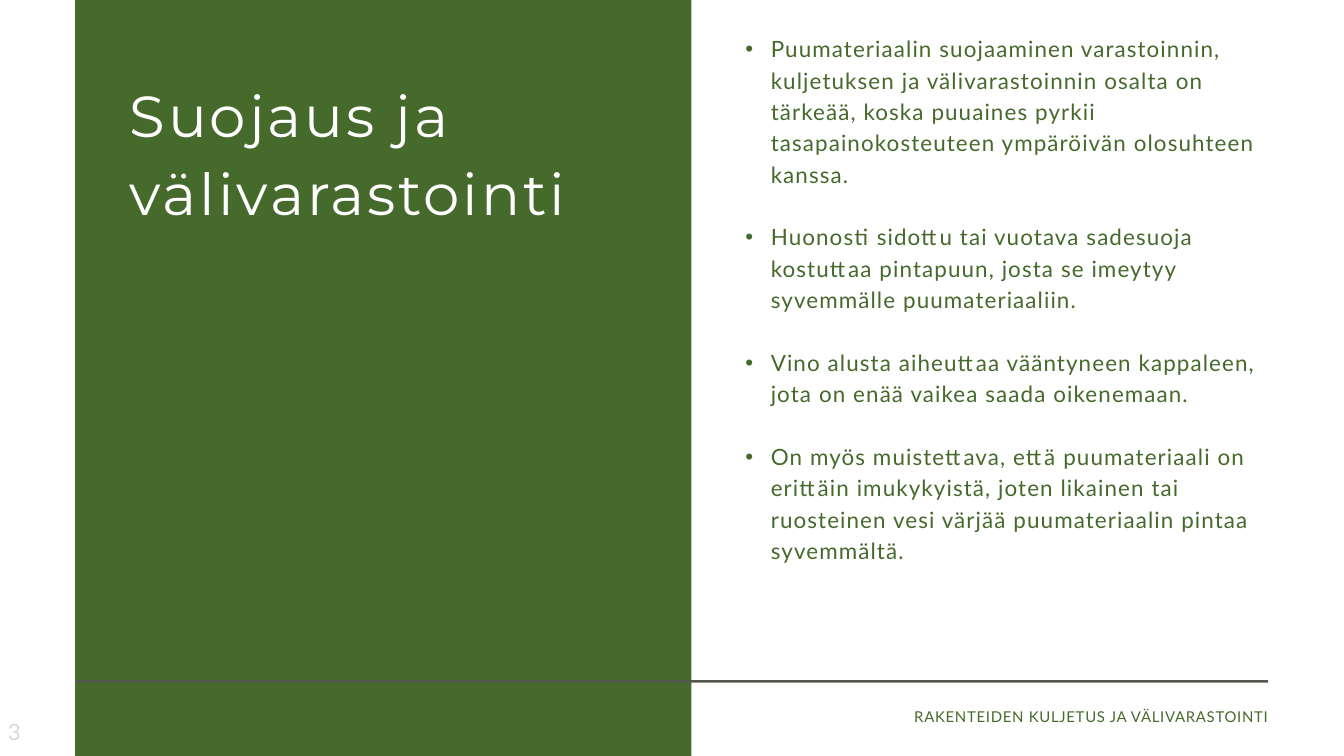
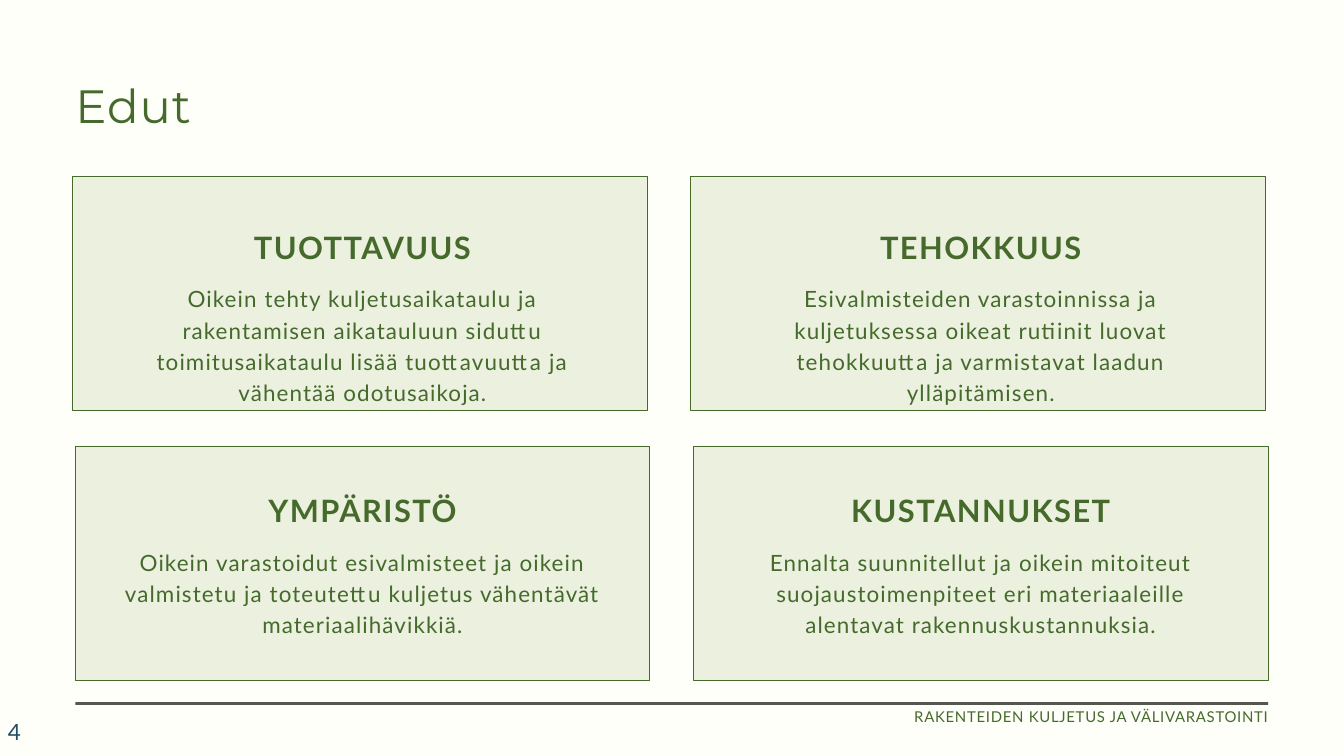
from lxml import etree
from pptx import Presentation, util as u
from pptx.dml.color import RGBColor
from pptx.enum import shapes, text
from pptx.oxml.ns import qn

# The grid has square cells, 20 columns across the slide.
COLUMNS, ROWS = 20, 11.25
CELL = u.Inches(1)
LEFT, WIDTH = 1.12, 17.75

GREEN = RGBColor(0x45, 0x6A, 0x2C)
PALE_GREEN = RGBColor(0xEB, 0xF1, 0xDE)
RULE_GREY = RGBColor(0x52, 0x58, 0x4D)
NUMBER_GREY = RGBColor(0xD9, 0xD9, 0xD9)
NUMBER_BLUE = RGBColor(0x1E, 0x4D, 0x65)
CREAM = RGBColor(0xFE, 0xFF, 0xF8)
WHITE = RGBColor(0xFF, 0xFF, 0xFF)

BODY_FONT, TITLE_FONT = "Lato", "Montserrat"
BODY_SIZE, BODY_LEADING, BODY_TRACKING = 24, 33.6, 1.2
FOOTER = "RAKENTEIDEN KULJETUS JA VÄLIVARASTOINTI"

BULLETS = [
    "Puumateriaalin suojaaminen varastoinnin, kuljetuksen ja välivarastoinnin osalta on "
    "tärkeää, koska puuaines pyrkii tasapainokosteuteen ympäröivän olosuhteen kanssa.",
    "Huonosti sidottu tai vuotava sadesuoja kostuttaa pintapuun, josta se imeytyy "
    "syvemmälle puumateriaaliin.",
    "Vino alusta aiheuttaa vääntyneen kappaleen, jota on enää vaikea saada oikenemaan.",
    "On myös muistettava, että puumateriaali on erittäin imukykyistä, joten likainen tai "
    "ruosteinen vesi värjää puumateriaalin pintaa syvemmältä.",
]

BENEFITS = [
    [
        ("TUOTTAVUUS", "Oikein tehty kuljetusaikataulu ja rakentamisen aikatauluun siduttu "
         "toimitusaikataulu lisää tuottavuutta ja vähentää odotusaikoja."),
        ("TEHOKKUUS", "Esivalmisteiden varastoinnissa ja kuljetuksessa oikeat rutiinit luovat "
         "tehokkuutta ja varmistavat laadun ylläpitämisen."),
    ],
    [
        ("YMPÄRISTÖ", "Oikein varastoidut esivalmisteet ja oikein valmistetu ja toteutettu "
         "kuljetus vähentävät materiaalihävikkiä."),
        ("KUSTANNUKSET", "Ennalta suunnitellut ja oikein mitoiteut suojaustoimenpiteet eri "
         "materiaaleille alentavat rakennuskustannuksia."),
    ],
]
# Left edge, top edge and heading offset of each row of cards
CARD_ROWS = [(1.08, 2.62, 0.76), (LEFT, 6.64, 0.66)]
CARD_PITCH = 9.2


def cells(*lengths):
    return [round(length * CELL) for length in lengths]


def format_text(box, color, size=BODY_SIZE, leading=None, tracking=BODY_TRACKING,
                font=BODY_FONT, bold=False, align=text.PP_ALIGN.LEFT):
    for para in box.text_frame.paragraphs:
        para.alignment = align
        if leading:
            para.line_spacing = u.Pt(leading)
        for span in para.runs:
            span.font.name = font
            span.font.size = u.Pt(size)
            span.font.bold = bold
            span.font.color.rgb = color
            span.font.language_id = None
            span._r.get_or_add_rPr().set("spc", str(round(tracking * 100)))


def set_frame(box, inset=0, anchor=text.MSO_ANCHOR.TOP):
    frame = box.text_frame
    frame.word_wrap = True
    frame.auto_size = text.MSO_AUTO_SIZE.NONE
    frame.vertical_anchor = anchor
    frame.margin_left = frame.margin_right = u.Inches(inset)
    frame.margin_top = frame.margin_bottom = u.Inches(inset / 2)


def add_text(page, place, words, color, inset=0, anchor=text.MSO_ANCHOR.TOP, **style):
    box = page.shapes.add_textbox(*cells(*place))
    set_frame(box, inset, anchor)
    box.text_frame.text = words
    format_text(box, color, **style)
    return box


def add_block(page, place, fill, line=None):
    block = page.shapes.add_shape(shapes.MSO_SHAPE.RECTANGLE, *cells(*place))
    block.shadow.inherit = False
    block.fill.solid()
    block.fill.fore_color.rgb = fill
    if line is None:
        block.line.fill.background()
    else:
        block.line.color.rgb = line
        block.line.width = u.Pt(0.75)
    return block


def set_title(page, place, words, color, **style):
    title = page.shapes.title
    title.left, title.top, title.width, title.height = cells(*place)
    set_frame(title)
    title.text_frame.text = words
    format_text(title, color, font=TITLE_FONT, **style)
    return title


def add_bullets(page, place, items):
    """Bulleted list with one empty line's height between items."""
    box = add_text(page, place, "\n".join(items), GREEN, leading=BODY_LEADING)
    for index, para in enumerate(box.text_frame.paragraphs):
        properties = para._p.get_or_add_pPr()
        properties.set("marL", str(u.Inches(0.38)))
        properties.set("indent", str(u.Inches(-0.38)))
        if index:
            para.space_before = u.Pt(BODY_LEADING)
        etree.SubElement(properties, qn("a:buFont"), typeface="Arial")
        etree.SubElement(properties, qn("a:buChar"), char="•")


def add_card(page, left, top, heading_offset, heading, body):
    add_block(page, (left, top, 8.55, 3.48), PALE_GREEN, GREEN)
    text_left = 1.7 if left < COLUMNS / 2 else 1.7 + CARD_PITCH
    text_top = top + heading_offset
    center = text.PP_ALIGN.CENTER
    add_text(page, (text_left, text_top, 7.39, 0.56), heading, GREEN, size=33,
             leading=41.2, tracking=1.6, bold=True, align=center)
    add_text(page, (text_left, text_top + 0.8, 7.39, 1.4), body, GREEN,
             leading=BODY_LEADING, align=center)


def add_footer(page, rule_top, number, number_color):
    add_block(page, (LEFT, rule_top, WIDTH, 0.04), RULE_GREY)
    add_text(page, (0.02, 10.69, 2.33, 0.4), number, number_color, inset=0.1,
             anchor=text.MSO_ANCHOR.MIDDLE)
    add_text(page, (10.56, 10.49, 8.32, 0.6), FOOTER, GREEN, size=16, leading=22.4,
             tracking=0.8, align=text.PP_ALIGN.RIGHT)


def add_page(deck, background):
    page = deck.slides.add_slide(deck.slide_layouts[5])
    page.background.fill.solid()
    page.background.fill.fore_color.rgb = background
    return page


def build_protection(deck):
    page = add_page(deck, WHITE)
    title = set_title(page, (1.93, 1.05, 7.56, 2.32), "Suojaus ja välivarastointi", WHITE,
                      size=62, leading=83.7, tracking=3.1)
    panel = add_block(page, (LEFT, 0, 9.17, ROWS), GREEN)
    title.element.addprevious(panel.element)
    add_bullets(page, (11.09, 0.46, 7.78, 8.07), BULLETS)
    add_footer(page, 10.12, "3", NUMBER_GREY)


def build_benefits(deck):
    page = add_page(deck, CREAM)
    set_title(page, (LEFT, 1.05, 7.75, 0.89), "Edut", GREEN, size=50, leading=66.8, tracking=1)
    for (left, top, heading_offset), cards in zip(CARD_ROWS, BENEFITS):
        for column, (heading, body) in enumerate(cards):
            add_card(page, left + column * CARD_PITCH, top, heading_offset, heading, body)
    add_footer(page, 10.45, "4", NUMBER_BLUE)


def main():
    deck = Presentation()
    deck.slide_width, deck.slide_height = cells(COLUMNS, ROWS)
    build_protection(deck)
    build_benefits(deck)
    deck.save("out.pptx")


if __name__ == "__main__":
    main()
